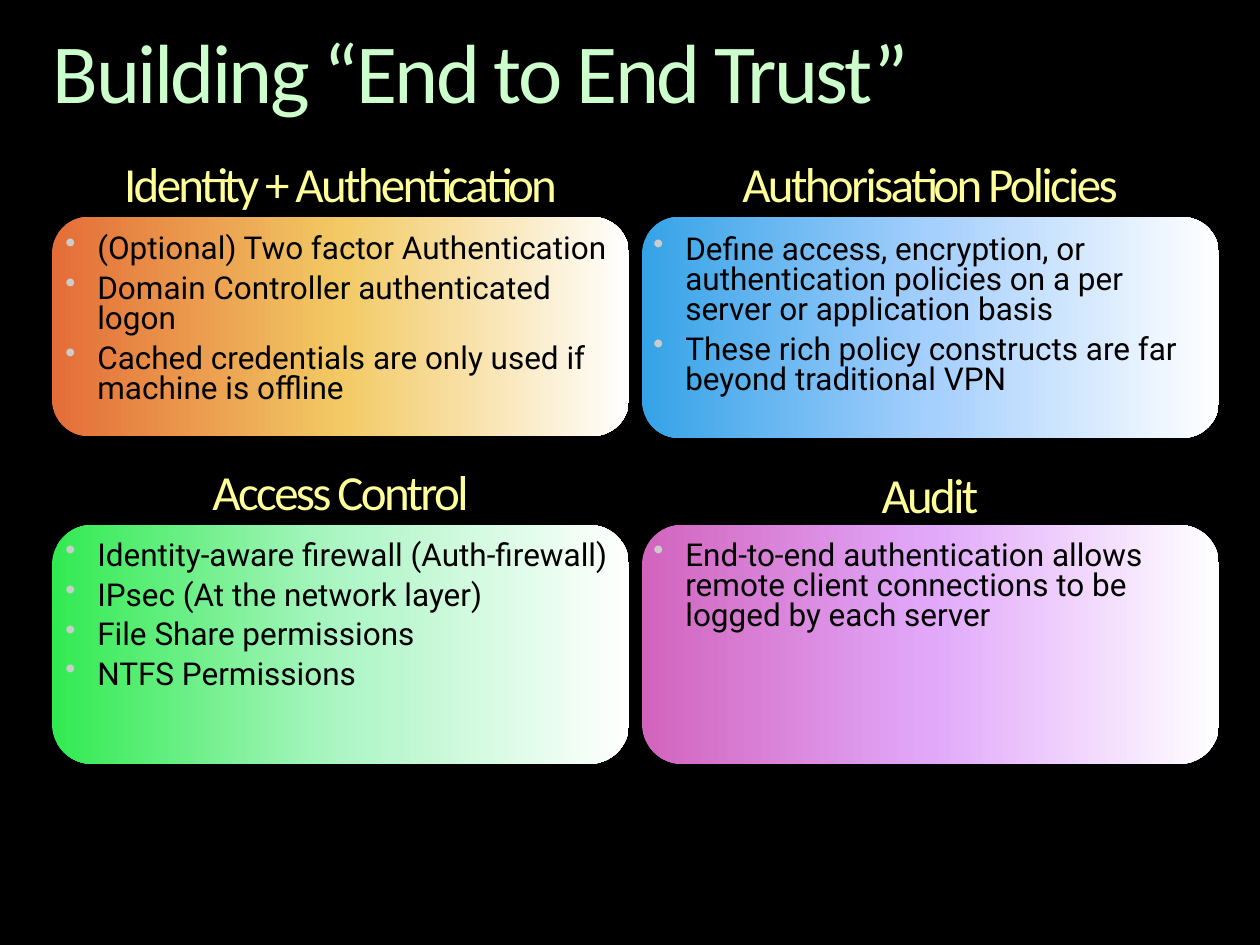
from copy import deepcopy

from pptx import Presentation
from pptx.dml.color import RGBColor
from pptx.enum.shapes import MSO_SHAPE
from pptx.enum.text import MSO_AUTO_SIZE, PP_ALIGN
from pptx.oxml.ns import qn
from pptx.oxml.xmlchemy import OxmlElement
from pptx.util import Pt

ROUND_RECT = MSO_SHAPE.ROUNDED_RECTANGLE
GROW = MSO_AUTO_SIZE.SHAPE_TO_FIT_TEXT
LEFT, CENTER = PP_ALIGN.LEFT, PP_ALIGN.CENTER
PX = 914400 // 126


def rgb(color):
    return RGBColor.from_string(color)


def add_text(box, lines, font, size, color, align=LEFT, spacing=1.0, tracking=0, bullets=False):
    tb = slide.shapes.add_textbox(*[n * PX for n in box])
    tf = tb.text_frame
    tf.word_wrap = True
    tf.auto_size = GROW
    for i, line in enumerate(lines):
        p = tf.paragraphs[0] if i == 0 else tf.add_paragraph()
        p.alignment = align
        p.line_spacing = spacing
        if bullets:
            if i:
                p.space_before = Pt(5.4)
            pPr = p._p.get_or_add_pPr()
            pPr.set("marL", str(32 * PX))
            pPr.set("indent", str(-32 * PX))
            bu_color = OxmlElement("a:buClr")
            clr = OxmlElement("a:srgbClr")
            clr.set("val", "CCCCCC")
            bu_color.append(clr)
            bu_size = OxmlElement("a:buSzPct")
            bu_size.set("val", "95000")
            bu_char = OxmlElement("a:buChar")
            bu_char.set("char", "•")
            pPr.extend([bu_color, bu_size, bu_char])
        p.font.name = font
        p.font.size = Pt(size)
        p.font.color.rgb = rgb(color)
        r = p.add_run()
        r.text = line
        if tracking:
            r._r.get_or_add_rPr().set("spc", str(tracking))
    return tf


prs = Presentation()
prs.slide_width, prs.slide_height = 1260 * PX, 945 * PX
slide = prs.slides.add_slide(prs.slide_layouts[6])
slide.background.fill.solid()
slide.background.fill.fore_color.rgb = rgb("000000")

tf = add_text((53, 31, 1155, 92), ["Building “End to End Trust”"], "Calibri", 48, "CCFFCC",
              spacing=0.9, tracking=-150)
tf.margin_left = tf.margin_right = tf.margin_top = tf.margin_bottom = 0

# heading, heading box, panel box, panel colours, bullet box, bullets
panels = [
    ("Identity + Authentication", (55, 147, 571, 72), (52, 217, 577, 219), ("E46D38", "F2C964"),
     (53, 229, 567, 188),
     ["(Optional) Two factor Authentication",
      "Domain Controller authenticated logon",
      "Cached credentials are only used if machine is offline"]),
    ("Authorisation Policies", (645, 147, 570, 72), (642, 217, 577, 221), ("35A3E7", "A5CFFD"),
     (641, 230, 570, 176),
     ["Define access, encryption, or authentication policies on a per server or application basis",
      "These rich policy constructs are far beyond traditional VPN"]),
    ("Access Control", (55, 455, 571, 72), (52, 525, 577, 239), ("32EA51", "ADF5C5"),
     (53, 536, 567, 212),
     ["Identity-aware firewall (Auth-firewall)",
      "IPsec (At the network layer)",
      "File Share permissions",
      "NTFS Permissions"]),
    ("Audit", (645, 458, 570, 72), (642, 525, 577, 239), ("D264BD", "E1A8FA"),
     (641, 536, 560, 146),
     ["End-to-end authentication allows remote client connections to be logged by each server"]),
]

for heading, heading_box, panel_box, colors, bullet_box, bullets in panels:
    sp = slide.shapes.add_shape(ROUND_RECT, *[n * PX for n in panel_box])
    sp.shadow.inherit = False
    sp.line.fill.background()
    sp.fill.gradient()
    sp.fill.gradient_angle = 0
    stop_list = sp._element.spPr.find(".//" + qn("a:gsLst"))
    stop_list.insert(1, deepcopy(stop_list[0]))
    for stop, position, color in zip(sp.fill.gradient_stops, (0, 0.5, 1), (*colors, "FFFFFF")):
        stop.position = position
        stop.color.rgb = rgb(color)

    add_text(heading_box, [heading], "Calibri", 28, "FFFF99", align=CENTER, tracking=-150)
    add_text(bullet_box, bullets, "Roboto", 18, "000000", spacing=0.8, bullets=True)

prs.save("out.pptx")
